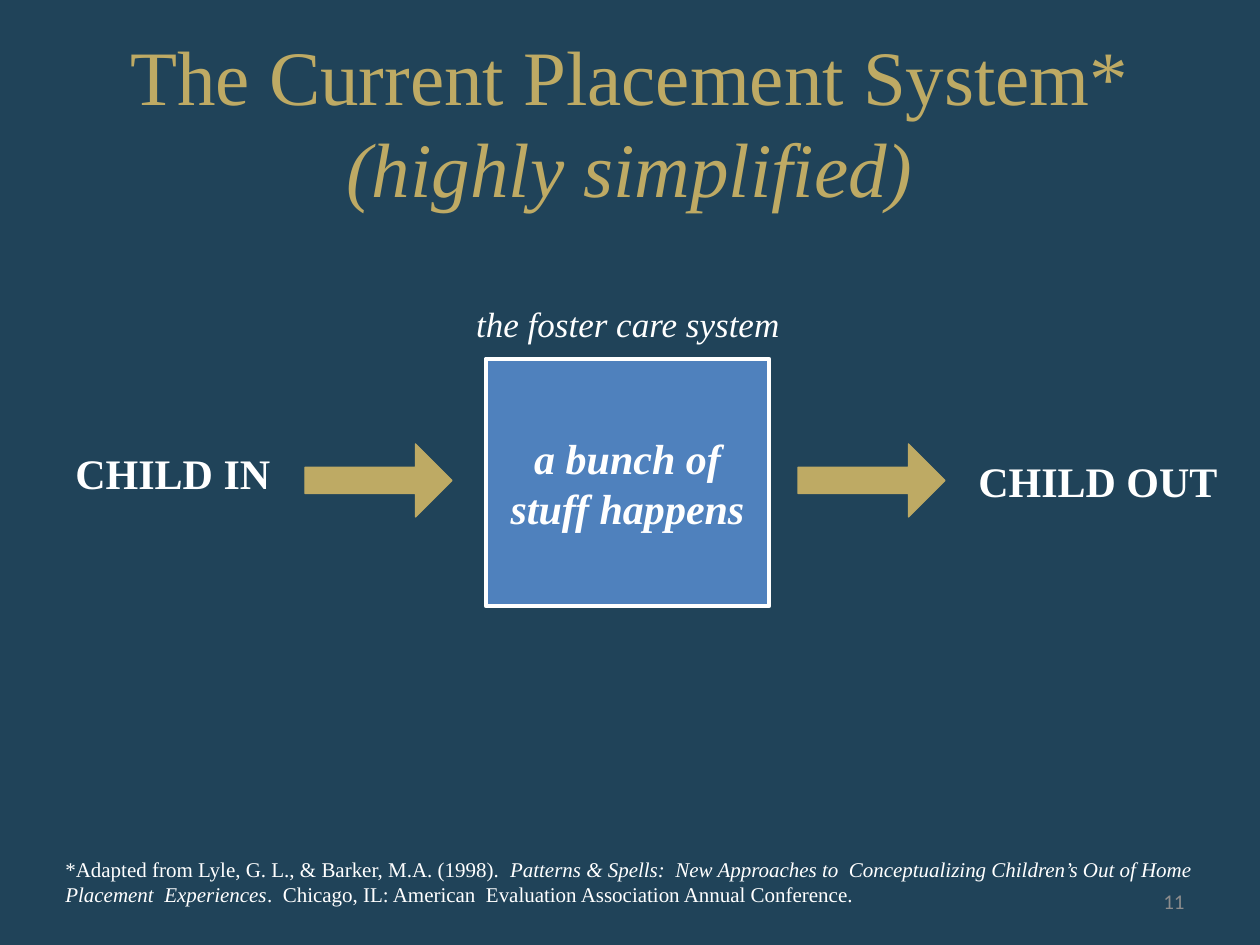
"""Build the slide on the simplified foster care placement system."""
from pptx import Presentation
from pptx.dml.color import RGBColor
from pptx.enum.shapes import MSO_SHAPE
from pptx.enum.text import MSO_ANCHOR, PP_ALIGN
from pptx.util import Pt

EMU_PER_INCH = 914400
PX_PER_INCH = 126
NAVY, GOLD, BLUE, WHITE, GRAY = "204359", "BEAA64", "4F81BD", "FFFFFF", "8C8C8C"


def place(*lengths):
    return [round(px * EMU_PER_INCH / PX_PER_INCH) for px in lengths]


def write(frame, text, size=24, color=WHITE, font="Times New Roman", bold=False,
          italic=False, align=PP_ALIGN.LEFT, anchor=MSO_ANCHOR.TOP, wrap=True):
    frame.word_wrap = wrap
    frame.vertical_anchor = anchor
    paragraph = frame.paragraphs[0]
    paragraph.alignment = align
    run = paragraph.add_run()
    run.text = text
    run.font.name = font
    run.font.size = Pt(size)
    run.font.bold = bold
    run.font.italic = italic
    run.font.color.rgb = RGBColor.from_string(color)


deck = Presentation()
deck.slide_width, deck.slide_height = place(1260, 945)
slide = deck.slides.add_slide(deck.slide_layouts[5])
slide.background.fill.solid()
slide.background.fill.fore_color.rgb = RGBColor.from_string(NAVY)
shapes = slide.shapes

heading = shapes.title
heading.left, heading.top, heading.width, heading.height = place(32, 42, 1196, 158)
heading_format = dict(size=44, color=GOLD, align=PP_ALIGN.CENTER, anchor=MSO_ANCHOR.MIDDLE)
write(heading.text_frame, "The Current Placement System*", **heading_format)
heading.text_frame.paragraphs[0].add_line_break()
write(heading.text_frame, "(highly simplified)", italic=True, **heading_format)

citation = shapes.add_textbox(*place(53, 850, 1155, 64)).text_frame
for passage, italic in [
    ("*Adapted from Lyle, G. L., & Barker, M.A. (1998).  ", False),
    ("Patterns & Spells:  New Approaches to  Conceptualizing Children’s Out of Home "
     "Placement  Experiences", True),
    (".  Chicago, IL: American  Evaluation Association Annual Conference.", False),
]:
    write(citation, passage, size=12, italic=italic)

for kind, bounds, fill, outline, weight in [
    (MSO_SHAPE.RECTANGLE, (486, 359, 283, 247), BLUE, WHITE, 2.75),
    (MSO_SHAPE.RIGHT_ARROW, (305, 444, 147, 73), GOLD, GOLD, 0.75),
    (MSO_SHAPE.RIGHT_ARROW, (798, 444, 147, 73), GOLD, GOLD, 0.75),
]:
    stage = shapes.add_shape(kind, *place(*bounds))
    stage.shadow.inherit = False
    stage.fill.solid()
    stage.fill.fore_color.rgb = RGBColor.from_string(fill)
    stage.line.color.rgb = RGBColor.from_string(outline)
    stage.line.width = Pt(weight)
    if kind == MSO_SHAPE.RIGHT_ARROW:
        stage.adjustments[0] = 0.36

for label, bounds, label_format in [
    ("CHILD IN", (63, 441, 222, 63), dict(bold=True, wrap=False)),
    ("CHILD OUT", (966, 449, 266, 63), dict(bold=True, wrap=False)),
    ("a bunch of stuff happens", (486, 426, 283, 115),
     dict(bold=True, italic=True, align=PP_ALIGN.CENTER)),
    ("the foster care system", (397, 296, 462, 55),
     dict(size=20, italic=True, align=PP_ALIGN.CENTER)),
    ("11", (903, 876, 294, 50),
     dict(size=12, color=GRAY, font="Calibri", align=PP_ALIGN.RIGHT, anchor=MSO_ANCHOR.MIDDLE)),
]:
    write(shapes.add_textbox(*place(*bounds)).text_frame, label, **label_format)

deck.save("out.pptx")
